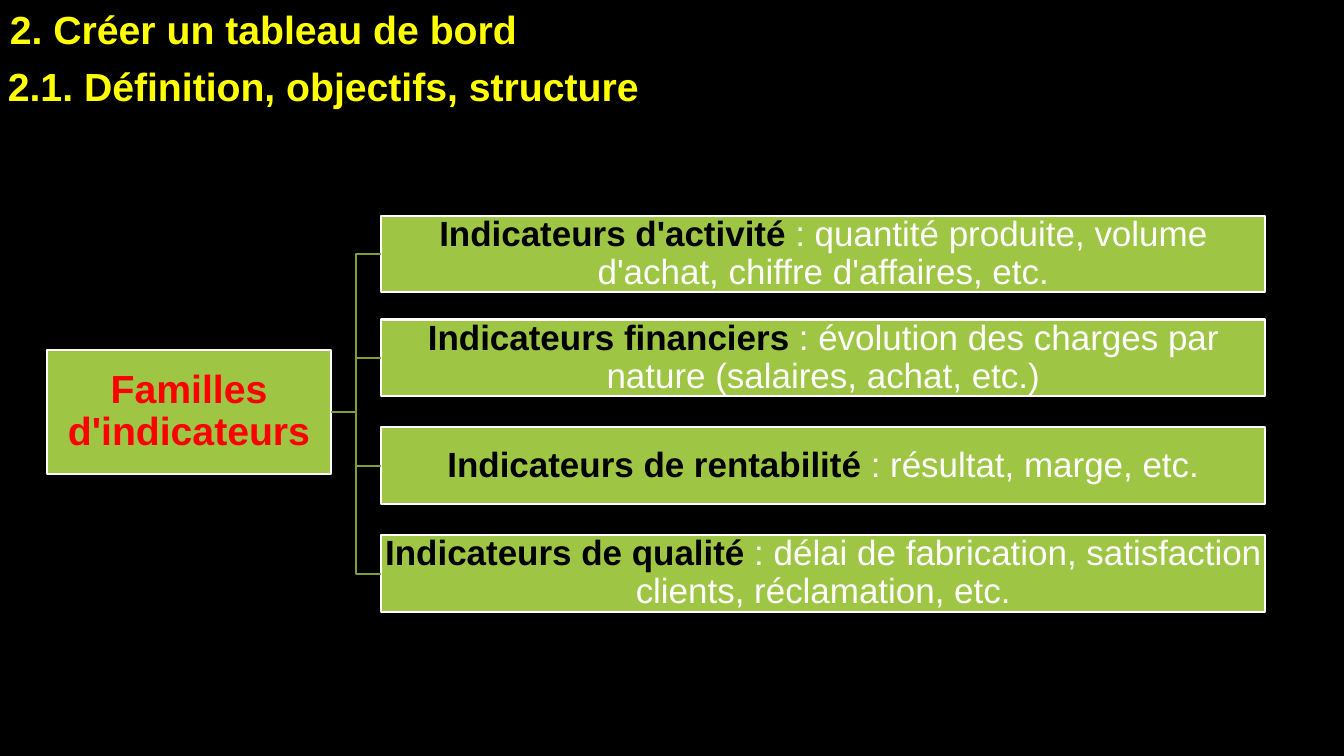
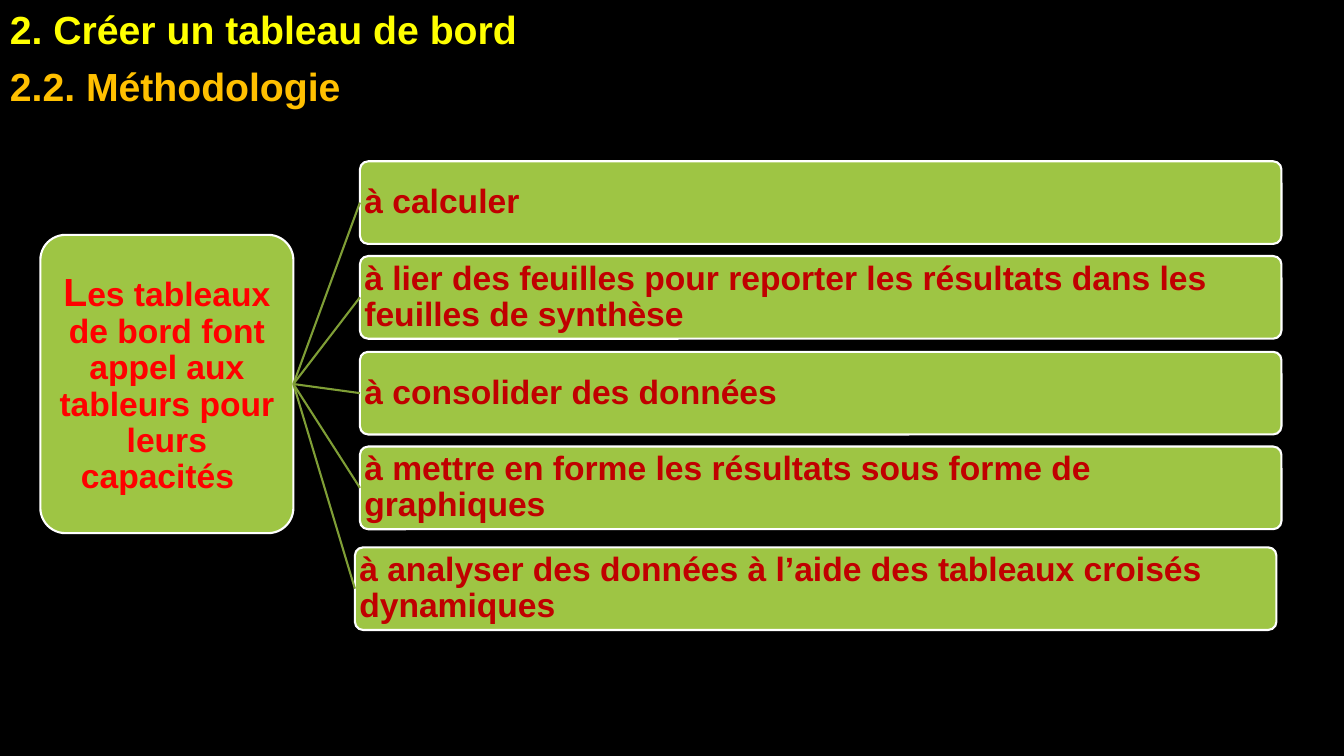
from pptx import Presentation, util as u
from pptx.dml.color import RGBColor
from pptx.enum import shapes, text
from pptx.oxml.ns import qn
from lxml import etree

PX = 9144  # one px is a hundredth of an inch
FONT = "Arial"
COLORS = {
    "background": "000000", "title": "FFFF00", "method": "FFC000",
    "box": "9EC544", "border": "FFFFFF", "link": "7F9E36",
    "root": "FF0000", "family": "000000", "detail": "FFFFFF", "ability": "C00000",
}
CENTER, LEFT = text.PP_ALIGN.CENTER, text.PP_ALIGN.LEFT
RIGHT_SIDE, LEFT_SIDE = 3, 1

FAMILIES = [
    ("Indicateurs d'activité", " : quantité produite, volume d'achat, chiffre d'affaires, etc."),
    ("Indicateurs financiers", " : évolution des charges par nature (salaires, achat, etc.)"),
    ("Indicateurs de rentabilité", " : résultat, marge, etc."),
    ("Indicateurs de qualité", " : délai de fabrication, satisfaction clients, réclamation, etc."),
]
FAMILY_TOPS = [214, 317, 424, 531]

ABILITIES = [
    "à calculer",
    "à lier des feuilles pour reporter les résultats dans les feuilles de synthèse",
    "à consolider des données",
    "à mettre en forme les résultats sous forme de graphiques",
    "à analyser des données à l’aide des tableaux croisés dynamiques",
]
# The last box sits a little lower and further left than the regular stack
ABILITY_CORNERS = [(357, 160), (357, 254), (357, 349), (357, 443), (352, 543)]


def px(*lengths):
    return [u.Emu(length * PX) for length in lengths]


def rgb(name):
    return RGBColor.from_string(COLORS[name])


def add_runs(paragraph, runs):
    """Each run is (wording, size, colour name, bold)."""
    for wording, size, color, bold in runs:
        run = paragraph.add_run()
        run.text = wording
        run.font.name = FONT
        run.font.size = u.Pt(size)
        run.font.bold = bold
        run.font.color.rgb = rgb(color)


def add_heading(slide, wording, left, top, color, before, after):
    heading = slide.shapes.add_textbox(*px(left, top, 1094, 57))
    heading.text_frame.word_wrap = True
    paragraph = heading.text_frame.paragraphs[0]
    paragraph.space_before, paragraph.space_after = u.Pt(before), u.Pt(after)
    add_runs(paragraph, [(wording, 28, color, True)])


def add_box(slide, bounds, runs, align=CENTER, rounded=False):
    kind = shapes.MSO_SHAPE.ROUNDED_RECTANGLE if rounded else shapes.MSO_SHAPE.RECTANGLE
    box = slide.shapes.add_shape(kind, *px(*bounds))
    if rounded:
        box.adjustments[0] = 0.1
    box.shadow.inherit = False
    box.fill.solid()
    box.fill.fore_color.rgb = rgb("box")
    box.line.color.rgb = rgb("border")
    box.line.width = u.Pt(1.5)

    frame = box.text_frame
    frame.word_wrap = True
    frame.vertical_anchor = text.MSO_ANCHOR.MIDDLE
    frame.margin_left, frame.margin_top, frame.margin_right, frame.margin_bottom = px(2, 2, 2, 2)
    paragraph = frame.paragraphs[0]
    paragraph.alignment = align
    paragraph.line_spacing = 0.9
    add_runs(paragraph, runs)
    return box


def add_link(slide, root, branch, kind):
    link = slide.shapes.add_connector(kind, 0, 0, 0, 0)
    link.begin_connect(root, RIGHT_SIDE)
    link.end_connect(branch, LEFT_SIDE)
    link.line.color.rgb = rgb("link")
    link.line.width = u.Pt(1.5)
    etree.SubElement(link._element.spPr, qn("a:effectLst"))


def add_slide(deck, subtitle, subtitle_left, subtitle_color):
    slide = deck.slides.add_slide(deck.slide_layouts[6])
    slide.background.fill.solid()
    slide.background.fill.fore_color.rgb = rgb("background")
    add_heading(slide, "2. Créer un tableau de bord", 0, 0, "title", 0, 3)
    add_heading(slide, subtitle, subtitle_left, 57, subtitle_color, 12, 6)
    return slide


def build_families(deck):
    slide = add_slide(deck, "2.1. Définition, objectifs, structure", -2, "title")
    root = add_box(slide, (47, 347, 281, 123), [("Familles d'indicateurs", 28, "root", True)])
    for (family, detail), top in zip(FAMILIES, FAMILY_TOPS):
        runs = [(family, 25, "family", True), (detail, 25, "detail", False)]
        branch = add_box(slide, (378, top, 877, 76), runs)
        add_link(slide, root, branch, shapes.MSO_CONNECTOR.ELBOW)


def build_method(deck):
    slide = add_slide(deck, "2.2. Méthodologie", 0, "method")
    opening = [
        ("L", 28, "root", True),
        ("es tableaux de bord font appel aux tableurs pour leurs capacités  ", 24, "root", True),
    ]
    root = add_box(slide, (40, 233, 251, 296), opening, rounded=True)
    for ability, (left, top) in zip(ABILITIES, ABILITY_CORNERS):
        branch = add_box(slide, (left, top, 914, 82), [(ability, 24, "ability", True)],
                         align=LEFT, rounded=True)
        add_link(slide, root, branch, shapes.MSO_CONNECTOR.STRAIGHT)


def main():
    deck = Presentation()
    deck.slide_width, deck.slide_height = px(1333, 750)
    build_families(deck)
    build_method(deck)
    deck.save("out.pptx")


if __name__ == "__main__":
    main()
